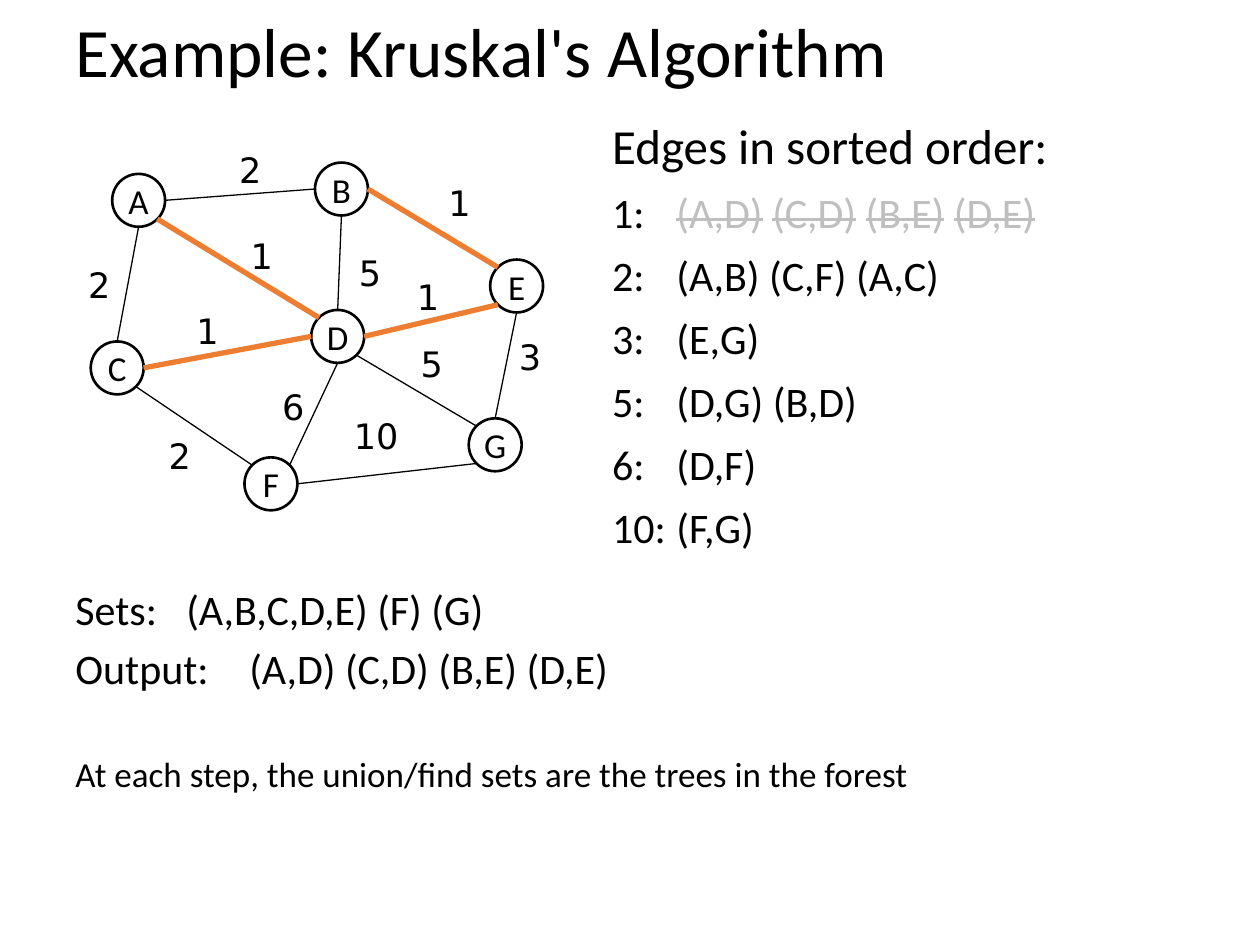
from lxml import etree
from pptx import Presentation
from pptx import util as u
from pptx.dml.color import RGBColor
from pptx.enum import shapes, text
from pptx.oxml import ns

BLACK = RGBColor(0x00, 0x00, 0x00)
GRAY = RGBColor(0xBF, 0xBF, 0xBF)
ORANGE = RGBColor(0xED, 0x7D, 0x31)

COLUMNS, ROWS = 100, 75
RADIUS = 2.1  # of a graph node, in grid units

# Graph nodes: centre column and row
NODES = {
    "A": (11, 15.9), "B": (27.1, 15), "C": (9.3, 29.2), "D": (26.8, 26.7),
    "F": (21.5, 38.4), "E": (41, 22.7), "G": (39.3, 35.3),
}

# Node rim points, as directions from the centre
DIAGONAL = 0.5 ** 0.5
RIM = {
    "N": (0, -1), "S": (0, 1), "W": (-1, 0), "E": (1, 0),
    "NW": (-DIAGONAL, -DIAGONAL), "NE": (DIAGONAL, -DIAGONAL),
    "SW": (-DIAGONAL, DIAGONAL), "SE": (DIAGONAL, DIAGONAL),
}

# Graph edges: node and rim point at each end, weight, weight's column and row
EDGES = [
    ("A", "S", "C", "N", 2, 6, 20.4),
    ("B", "W", "A", "E", 2, 18, 11.3),
    ("D", "N", "B", "S", 5, 27.5, 19.5),
    ("A", "SE", "D", "NW", 1, 18.9, 18.1),
    ("C", "E", "D", "W", 1, 14.6, 24.1),
    ("D", "E", "E", "SW", 1, 32.1, 21.4),
    ("E", "NW", "B", "E", 1, 34.6, 13.9),
    ("C", "SE", "F", "NW", 2, 12.4, 34),
    ("D", "S", "F", "NE", 6, 21.4, 30.1),
    ("D", "SE", "G", "NW", 5, 32.4, 26.7),
    ("G", "N", "E", "S", 3, 40.2, 26.1),
    ("F", "E", "G", "SW", 10, 27.1, 32.4),
]
CHOSEN = {"AD", "CD", "DE", "EB"}

DONE_EDGES = ["(A,D)", "(C,D)", "(B,E)", "(D,E)"]
OPEN_EDGES = [
    "2:\t(A,B) (C,F) (A,C)", "3:\t(E,G)", "5:\t(D,G) (B,D)",
    "6:\t(D,F)", "10:\t(F,G)",
]


def add_run(paragraph, words, size=24, color=BLACK, font="Calibri", strike=False):
    run = paragraph.add_run()
    run.text = words
    run.font.size = u.Pt(size)
    run.font.name = font
    run.font.color.rgb = color
    if strike:
        run.font._element.set("strike", "sngStrike")


class GraphSlide:
    """Holds the current slide and its grid, with a method per element."""

    def __init__(self, deck):
        self.column = deck.slide_width / COLUMNS
        self.row = deck.slide_height / ROWS
        self.slide = deck.slides.add_slide(deck.slide_layouts[6])

    def place(self, column, row):
        return round(column * self.column), round(row * self.row)

    def box(self, column, row, width, height, wrap=True):
        frame = self.slide.shapes.add_textbox(
            *self.place(column, row), *self.place(width, height)).text_frame
        frame.word_wrap = wrap
        return frame

    def paragraph(self, frame, hanging=0.0, tab=None, before=0, spacing=None):
        first = frame.paragraphs[0]
        paragraph = frame.add_paragraph() if first.runs else first
        paragraph.space_before = u.Pt(before)
        paragraph.line_spacing = spacing
        props = paragraph._p.get_or_add_pPr()
        props.set("marL", str(u.Inches(hanging)))
        props.set("indent", str(-u.Inches(hanging)))
        if tab:
            stops = etree.SubElement(props, ns.qn("a:tabLst"))
            etree.SubElement(stops, ns.qn("a:tab"), pos=str(u.Inches(tab)), algn="l")
        return paragraph

    def node(self, name):
        column, row = NODES[name]
        circle = self.slide.shapes.add_shape(
            shapes.MSO_SHAPE.OVAL, *self.place(column - RADIUS, row - RADIUS),
            *self.place(2 * RADIUS, 2 * RADIUS))
        circle.shadow.inherit = False
        circle.fill.background()
        circle.line.color.rgb = BLACK
        circle.line.width = u.Pt(1.5)
        frame = circle.text_frame
        frame.word_wrap = False
        frame.vertical_anchor = text.MSO_ANCHOR.MIDDLE
        frame.paragraphs[0].alignment = text.PP_ALIGN.CENTER
        add_run(frame.paragraphs[0], name, size=20)

    def rim_point(self, name, side):
        (column, row), (across, down) = NODES[name], RIM[side]
        return self.place(column + across * RADIUS, row + down * RADIUS)

    def edge(self, start, start_side, end, end_side):
        line = self.slide.shapes.add_connector(
            shapes.MSO_CONNECTOR.STRAIGHT,
            *self.rim_point(start, start_side), *self.rim_point(end, end_side))
        chosen = start + end in CHOSEN
        line.line.color.rgb = ORANGE if chosen else BLACK
        line.line.width = u.Pt(3 if chosen else 0.75)
        etree.SubElement(line._element.spPr, ns.qn("a:effectLst"))

    def weight(self, value, column, row):
        frame = self.box(column, row, 5.6 if value > 9 else 3.8, 4.4, wrap=False)
        frame.auto_size = text.MSO_AUTO_SIZE.SHAPE_TO_FIT_TEXT
        add_run(frame.paragraphs[0], str(value), size=20, font="DejaVu Sans")


def main():
    deck = Presentation()
    deck.slide_width, deck.slide_height = u.Inches(10), u.Inches(7.5)
    page = GraphSlide(deck)

    # Title
    title = page.box(5, 1.7, 92.5, 5.3)
    title.vertical_anchor = text.MSO_ANCHOR.MIDDLE
    add_run(page.paragraph(title, spacing=0.9), "Example: Kruskal's Algorithm", size=39.6)

    # Sorted edge list
    edge_list = page.box(47.6, 9.2, 51.2, 36.7)
    heading = page.paragraph(edge_list, hanging=0.25, before=10, spacing=0.9)
    add_run(heading, "Edges in sorted order:", size=28)
    entry = {"hanging": 0.51, "before": 10, "spacing": 0.9}
    done = page.paragraph(edge_list, **entry)
    add_run(done, "1:\t")
    for position, pair in enumerate(DONE_EDGES):
        if position:
            add_run(done, " ", color=GRAY)
        add_run(done, pair, color=GRAY, strike=True)
    for line in OPEN_EDGES:
        add_run(page.paragraph(edge_list, **entry), line)

    # Remark
    remark = page.box(5, 59.2, 85.2, 4.4)
    add_run(page.paragraph(remark),
            "At each step, the union/find sets are the trees in the forest", size=20)

    # Current sets and output
    state = page.box(5, 45.8, 77.5, 9.9)
    for line in ("Sets:\t(A,B,C,D,E) (F) (G)", "Output:\t(A,D) (C,D) (B,E) (D,E)"):
        add_run(page.paragraph(state, hanging=0.38, tab=1.44, before=4.8), line)

    # Graph
    for name in NODES:
        page.node(name)
    for *ends, value, column, row in EDGES:
        page.edge(*ends)
        page.weight(value, column, row)

    deck.save("out.pptx")


if __name__ == "__main__":
    main()
